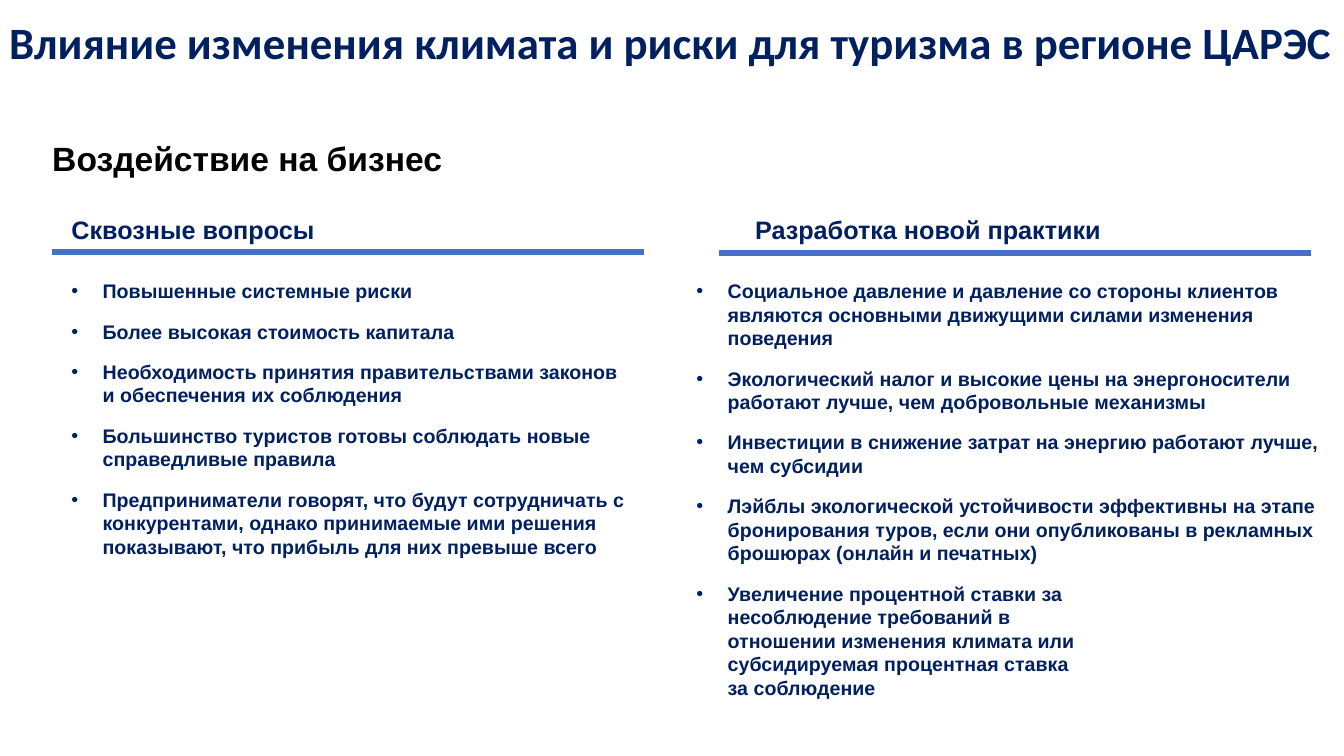
"""Builds the slide on the business impact of climate change on tourism."""
from copy import deepcopy

from lxml.etree import SubElement
from pptx import Presentation
from pptx.dml.color import RGBColor
from pptx.enum.shapes import MSO_CONNECTOR as CONN
from pptx.enum.text import MSO_ANCHOR as ANCHOR, PP_ALIGN as ALIGN
from pptx.oxml.ns import qn
from pptx.util import Inches, Pt

TITLE = "Влияние изменения климата и риски для туризма в регионе ЦАРЭС"
SUBTITLE = "Воздействие на бизнес"
COLUMNS = [
    {
        "heading": "Сквозные вопросы",
        "heading_box": (0.61, 3.42),
        "rule": (0.52, 2.5),
        "list_box": (0.61, 5.78, 2.89),
        "points": [
            "Повышенные системные риски",
            "Более высокая стоимость капитала",
            "Необходимость принятия правительствами законов и обеспечения их соблюдения",
            "Большинство туристов готовы соблюдать новые справедливые правила",
            "Предприниматели говорят, что будут сотрудничать с конкурентами, однако "
            "принимаемые ими решения показывают, что прибыль для них превыше всего",
        ],
    },
    {
        "heading": "Разработка новой практики",
        "heading_box": (7.39, 5.45),
        "rule": (7.13, 2.51),
        "list_box": (6.81, 6.46, 4.31),
        "points": [
            "Социальное давление и давление со стороны клиентов являются основными "
            "движущими силами изменения поведения",
            "Экологический налог и высокие цены на энергоносители работают лучше, "
            "чем добровольные механизмы",
            "Инвестиции в снижение затрат на энергию работают лучше, чем субсидии",
            "Лэйблы экологической устойчивости эффективны на этапе бронирования туров, "
            "если они опубликованы в рекламных брошюрах (онлайн и печатных)",
            "Увеличение процентной ставки за\nнесоблюдение требований в\n"
            "отношении изменения климата или\nсубсидируемая процентная ставка\n"
            "за соблюдение",
        ],
    },
]
COLORS = {"navy": "002060", "black": "000000", "rule": "4472C4"}
HEADING_TOP, LIST_TOP, RULE_WIDTH, INDENT = 2.08, 2.72, 5.87, 0.31


def add_text(s, box, lines, size, color="navy", font="Arial", after=12, bullet=False,
             align=ALIGN.LEFT, anchor=ANCHOR.TOP, spacing=None):
    tf = s.shapes.add_textbox(*map(Inches, box)).text_frame
    tf.word_wrap = True
    tf.vertical_anchor = anchor
    for i, line in enumerate(lines):
        p = tf.add_paragraph() if i else tf.paragraphs[0]
        p.text = line
        p.alignment = align
        p.space_after = Pt(after)
        if spacing:
            p.line_spacing = spacing
        if bullet:
            pPr = p._p.get_or_add_pPr()
            pPr.set("marL", str(Inches(INDENT)))
            pPr.set("indent", str(-Inches(INDENT)))
            SubElement(pPr, qn("a:buFont"), typeface="Arial")
            SubElement(pPr, qn("a:buChar"), char="•")
        for r in p.runs:
            r.font.name = font
            r.font.size = Pt(size)
            r.font.bold = True
            r.font.color.rgb = RGBColor.from_string(COLORS[color])
        for br in p._p.findall(qn("a:br")):
            br.append(deepcopy(p.runs[0]._r.rPr))


def add_rule(s, left, top):
    rule = s.shapes.add_connector(CONN.STRAIGHT, Inches(left), Inches(top),
                                  Inches(left + RULE_WIDTH), Inches(top))
    rule.line.color.rgb = RGBColor.from_string(COLORS["rule"])
    rule.line.width = Pt(4.5)
    SubElement(rule._element.spPr, qn("a:effectLst"))


def main():
    prs = Presentation()
    prs.slide_width, prs.slide_height = Inches(13.33), Inches(7.5)
    s = prs.slides.add_slide(prs.slide_layouts[6])
    add_text(s, (-0.3, -0.11, 13.91, 1.11), [TITLE], 32, font="Calibri", after=0,
             align=ALIGN.CENTER, anchor=ANCHOR.MIDDLE, spacing=0.9)
    add_text(s, (0.42, 1.32, 9.74, 0.5), [SUBTITLE], 24, color="black", after=6)
    for col in COLUMNS:
        left, width = col["heading_box"]
        add_text(s, (left, HEADING_TOP, width, 0.4), [col["heading"]], 18)
        add_rule(s, *col["rule"])
        left, width, height = col["list_box"]
        add_text(s, (left, LIST_TOP, width, height), col["points"], 14, bullet=True)
    prs.save("out.pptx")


if __name__ == "__main__":
    main()
